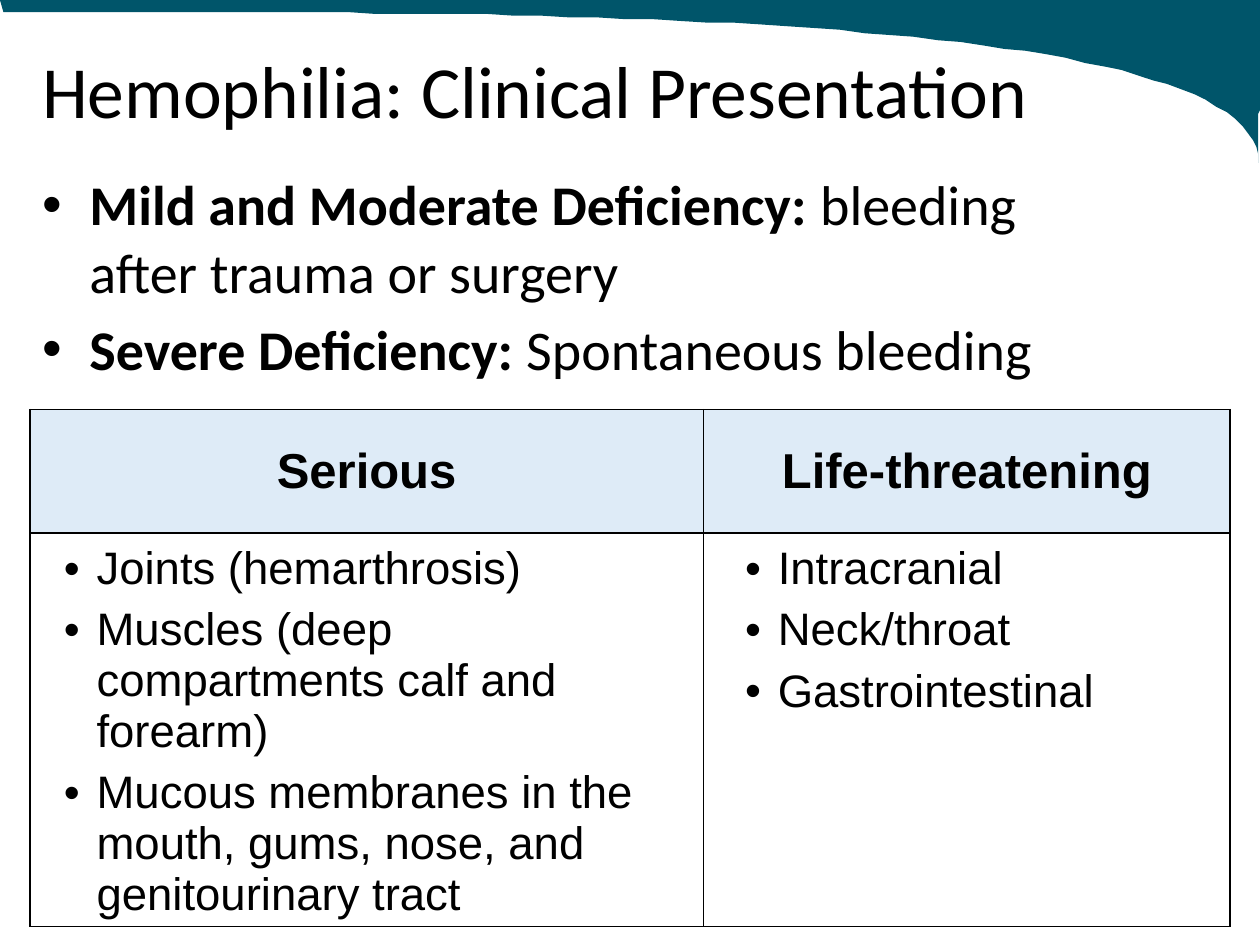
from dataclasses import dataclass

from lxml.etree import SubElement
from pptx import Presentation
from pptx.dml.color import RGBColor
from pptx.enum.text import MSO_ANCHOR as Anchor, PP_ALIGN as Align
from pptx.oxml import parse_xml
from pptx.oxml.ns import nsdecls, qn
from pptx.util import Pt

BLACK, TEAL, PALE_BLUE = "000000", "00556A", "DEEBF7"


@dataclass
class Run:
    text: str
    bold: bool = False


@dataclass
class Style:
    font: str
    size: float
    align: Align = Align.LEFT
    indent: float = 0
    hanging: float = 0
    space_before: float = 0
    line_spacing: float = 1


@dataclass
class Cell:
    paragraphs: list
    style: Style
    format: dict
    fill: str = ""


def color(value: str) -> RGBColor:
    return RGBColor.from_string(value)


def set_values(target, values: dict) -> None:
    for name, value in values.items():
        setattr(target, name, value)


def margins(left: float, top: float, right: float, bottom: float) -> dict:
    return {"margin_left": Pt(left), "margin_top": Pt(top),
            "margin_right": Pt(right), "margin_bottom": Pt(bottom)}


def add_bullet(paragraph, style: Style) -> None:
    properties = paragraph._p.get_or_add_pPr()
    properties.set("marL", str(Pt(style.indent)))
    properties.set("indent", str(-Pt(style.hanging)))
    SubElement(properties, qn("a:buFont"), typeface="Arial")
    SubElement(properties, qn("a:buChar"), char="•")


def write_text(frame, paragraphs: list[list[Run]], style: Style) -> None:
    for index, runs in enumerate(paragraphs):
        paragraph = frame.add_paragraph() if index else frame.paragraphs[0]
        if style.hanging:
            add_bullet(paragraph, style)
        set_values(paragraph, {
            "alignment": style.align,
            "line_spacing": style.line_spacing,
            "space_before": Pt(style.space_before if index else 0),
        })
        for item in runs:
            run = paragraph.add_run()
            run.text = item.text
            set_values(run.font, {"name": style.font, "size": Pt(style.size), "bold": item.bold})
            run.font.color.rgb = color(BLACK)


def add_text(slide, box: tuple, paragraphs: list, style: Style, anchor: Anchor) -> None:
    frame = slide.shapes.add_textbox(*map(Pt, box)).text_frame
    set_values(frame, {"word_wrap": True, "vertical_anchor": anchor})
    write_text(frame, paragraphs, style)


def add_borders(cell) -> None:
    properties = cell._tc.get_or_add_tcPr()
    for position, side in enumerate("LRTB"):
        properties.insert(position, parse_xml(
            f'<a:ln{side} {nsdecls("a")} w="{Pt(1)}"><a:solidFill>'
            f'<a:srgbClr val="{BLACK}"/></a:solidFill></a:ln{side}>'))


def add_table(slide, box: tuple, widths: list, heights: list, rows: list[list[Cell]]) -> None:
    table = slide.shapes.add_table(len(heights), len(widths), *map(Pt, box)).table
    set_values(table, {"first_row": False, "horz_banding": False})
    for column, width in zip(table.columns, widths):
        column.width = Pt(width)
    for row, height in zip(table.rows, heights):
        row.height = Pt(height)
    for row, contents in zip(table.rows, rows):
        for cell, content in zip(row.cells, contents):
            set_values(cell, content.format)
            if content.fill:
                cell.fill.solid()
                cell.fill.fore_color.rgb = color(content.fill)
            else:
                cell.fill.background()
            add_borders(cell)
            write_text(cell.text_frame, content.paragraphs, content.style)


def curve(points: list[tuple], steps: int = 60) -> list[tuple]:
    """Return points along the cubic Bezier curve with four control points."""
    result = []
    for step in range(1, steps + 1):
        t = step / steps
        weights = ((1 - t) ** 3, 3 * t * (1 - t) ** 2, 3 * t ** 2 * (1 - t), t ** 3)
        result.append(tuple(sum(w * p[axis] for w, p in zip(weights, points)) for axis in (0, 1)))
    return result


def add_swoosh(slide) -> None:
    right_edge = curve([(720, 0), (720, 10), (719.3, 82.8), (719.3, 92.9)])
    lower_edge = curve([(719.3, 92.9), (718.6, 0), (241.9, 7.2), (2.2, 7.2)])
    builder = slide.shapes.build_freeform(0, 0, scale=float(Pt(1)))
    builder.add_line_segments([(720, 0), *right_edge, *lower_edge], close=True)
    shape = builder.convert_to_shape()
    shape.shadow.inherit = False
    shape.fill.solid()
    shape.fill.fore_color.rgb = color(TEAL)
    shape.line.fill.background()


def header(text: str) -> Cell:
    return Cell([[Run(text, True)]], Style("Arial", 28, Align.CENTER),
                {"vertical_anchor": Anchor.MIDDLE, **margins(4.3, 4.3, 4.3, 4.3)}, PALE_BLUE)


def bullet_cell(indent: float, *texts: str) -> Cell:
    style = Style("Arial", 26, indent=indent, hanging=18.7, space_before=6)
    return Cell([[Run(text)] for text in texts], style,
                {"vertical_anchor": Anchor.TOP, **margins(5.8, 5.8, 5.8, 3.6)})


def main() -> None:
    presentation = Presentation()
    set_values(presentation, {"slide_width": Pt(720), "slide_height": Pt(540)})
    slide = presentation.slides.add_slide(presentation.slide_layouts[6])

    add_swoosh(slide)
    add_table(slide, (17, 234, 686, 294), [385, 301], [70.6, 223.4], [
        [header("Serious"), header("Life‐threatening")],
        [bullet_cell(32.4, "Joints (hemarthrosis)",
                     "Muscles (deep compartments calf and forearm)",
                     "Mucous membranes in the mouth, gums, nose, and genitourinary tract"),
         bullet_cell(36.7, "Intracranial", "Neck/throat", "Gastrointestinal")],
    ])
    add_text(slide, (17, 18, 686, 72), [[Run("Hemophilia: Clinical Presentation")]],
             Style("Calibri", 42, line_spacing=0.9), Anchor.MIDDLE)
    add_text(slide, (17, 93.6, 633.6, 129.6), [
        [Run("Mild and Moderate Deficiency: ", True), Run("bleeding after trauma or surgery")],
        [Run("Severe Deficiency: ", True), Run("Spontaneous bleeding")],
    ], Style("Calibri", 32, indent=27, hanging=27, space_before=6), Anchor.TOP)

    presentation.save("out.pptx")


if __name__ == "__main__":
    main()
